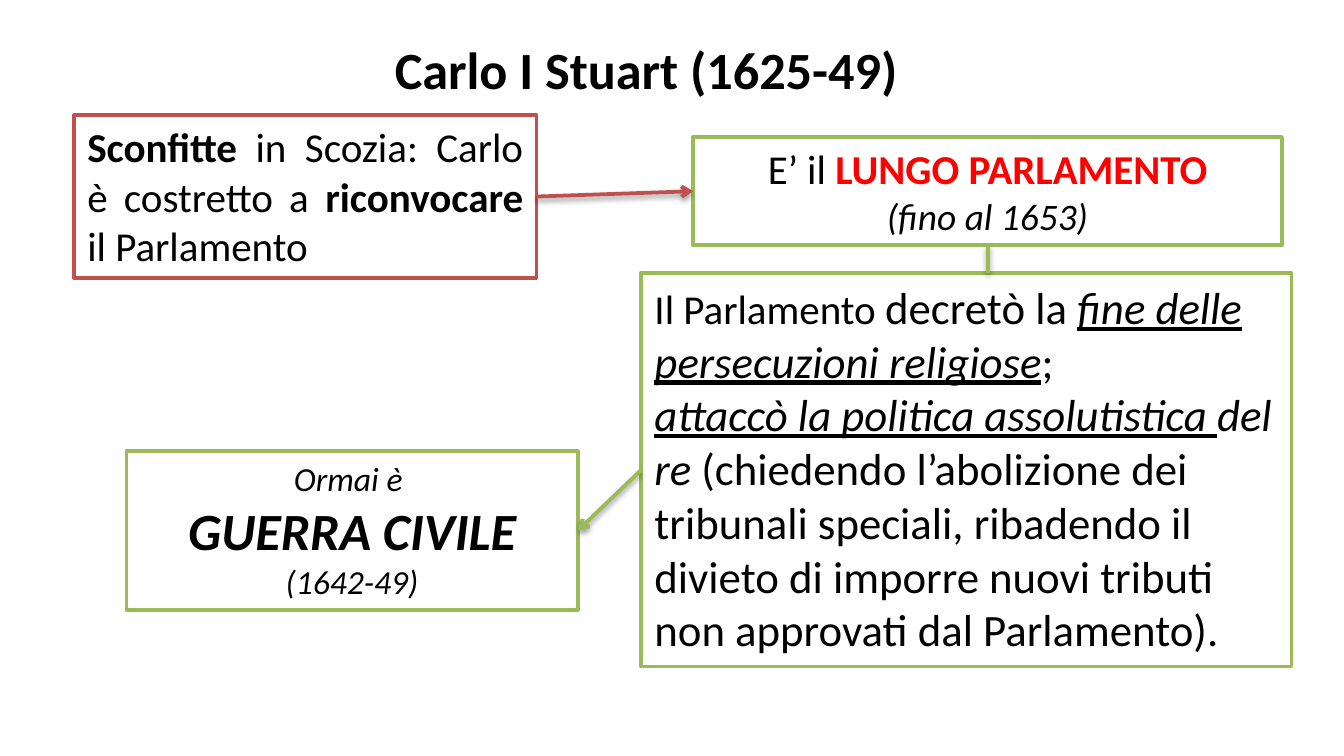
from dataclasses import dataclass
from typing import Optional

from lxml import etree
from pptx import Presentation
from pptx.dml.color import RGBColor
from pptx.enum import shapes, text
from pptx.oxml import ns
from pptx.util import Cm, Pt

BLACK = RGBColor(0x00, 0x00, 0x00)
WHITE = RGBColor(0xFF, 0xFF, 0xFF)
RED = RGBColor(0xFF, 0x00, 0x00)
BRICK = RGBColor(0xC0, 0x50, 0x4D)
GREEN = RGBColor(0x9B, 0xBB, 0x59)

FONT = "Calibri"
LEFT, MID, FULL = text.PP_ALIGN.LEFT, text.PP_ALIGN.CENTER, text.PP_ALIGN.JUSTIFY
# Connection sites of a rectangle
TOP_SITE, LEFT_SITE, LOW_SITE, RIGHT_SITE = range(4)


@dataclass
class Box:
    x: float
    y: float
    w: float
    h: float
    edge: Optional[RGBColor] = None

    def place(self) -> tuple:
        return Cm(self.x), Cm(self.y), Cm(self.w), Cm(self.h)


def add_box(slide, box: Box):
    """Draw a framed rectangle, or a bare text box when there is no edge."""
    if box.edge is None:
        shape = slide.shapes.add_textbox(*box.place())
    else:
        shape = slide.shapes.add_shape(shapes.MSO_SHAPE.RECTANGLE, *box.place())
        shape.shadow.inherit = False
        shape.fill.solid()
        shape.fill.fore_color.rgb = WHITE
        shape.line.color.rgb = box.edge
        shape.line.width = Pt(2)
    frame = shape.text_frame
    frame.word_wrap = True
    frame.auto_size = text.MSO_AUTO_SIZE.SHAPE_TO_FIT_TEXT
    frame.vertical_anchor = text.MSO_ANCHOR.TOP
    frame.paragraphs[0].alignment = LEFT
    return shape


def write(para, words: str, *, size: float, color: RGBColor = BLACK,
          bold: bool = False, ital: bool = False, under: bool = False) -> None:
    run = para.add_run()
    run.text = words
    font = run.font
    font.name, font.size, font.color.rgb = FONT, Pt(size), color
    font.bold, font.italic, font.underline = bold, ital, under


def add_para(shape, align, first: bool = False):
    frame = shape.text_frame
    para = frame.paragraphs[0] if first else frame.add_paragraph()
    para.alignment = align
    return para


def add_link(slide, start, site: int, color: RGBColor, end=None,
             goal: int = 0, drop: float = 0, arrow: bool = True) -> None:
    """Join two shapes, or drop a straight line from the start site."""
    line = slide.shapes.add_connector(shapes.MSO_CONNECTOR.STRAIGHT, 0, 0, 0, 0)
    line.begin_connect(start, site)
    if end is not None:
        line.end_connect(end, goal)
    else:
        line.end_x, line.end_y = line.begin_x, line.begin_y + Cm(drop)
    line.line.color.rgb = color
    line.line.width = Pt(2)
    if arrow:
        etree.SubElement(line.line._get_or_add_ln(), ns.qn("a:tailEnd"), type="arrow")
    # Soft shadow below the line
    effect = etree.SubElement(line._element.spPr, ns.qn("a:effectLst"))
    shade = etree.SubElement(effect, ns.qn("a:outerShdw"), blurRad=str(Pt(3.1)),
                             dist=str(Pt(1.6)), dir="5400000", rotWithShape="0")
    tint = etree.SubElement(shade, ns.qn("a:srgbClr"), val=str(BLACK))
    etree.SubElement(tint, ns.qn("a:alpha"), val="38000")


def main() -> None:
    deck = Presentation()
    deck.slide_width, deck.slide_height = Cm(25.4), Cm(14.29)
    slide = deck.slides.add_slide(deck.slide_layouts[6])

    # Title
    title = add_box(slide, Box(5.16, 0.58, 14.1, 1.45))
    write(add_para(title, MID, True), "Carlo I Stuart (1625-49)", size=28, bold=True)

    # Defeat in Scotland
    defeat = add_box(slide, Box(1.4, 2.18, 8.74, 3.07, BRICK))
    para = add_para(defeat, FULL, True)
    write(para, "Sconfitte", size=22, bold=True)
    write(para, " in Scozia: Carlo è costretto a ", size=22)
    write(para, "riconvocare", size=22, bold=True)
    write(para, " il Parlamento", size=22)

    # Civil war
    war = add_box(slide, Box(2.39, 8.53, 8.53, 3, GREEN))
    write(add_para(war, MID, True), "Ormai è ", size=18, ital=True)
    para = add_para(war, MID)
    write(para, "GUERRA CIVILE ", size=28, bold=True, ital=True)
    write(para, "(1642-49)", size=18, ital=True)

    # Long Parliament
    house = add_box(slide, Box(13.1, 2.59, 11.13, 2.05, GREEN))
    para = add_para(house, MID, True)
    write(para, "E’ il ", size=22)
    write(para, "LUNGO PARLAMENTO", size=22, color=RED, bold=True)
    write(add_para(house, MID), "(fino al 1653)", size=20, ital=True)

    # Its decrees
    acts = add_box(slide, Box(12.12, 5.16, 12.29, 7.44, GREEN))
    para = add_para(acts, LEFT, True)
    write(para, "Il Parlamento ", size=22)
    write(para, "decretò la ", size=24)
    write(para, "fine delle persecuzioni religiose", size=24, ital=True, under=True)
    write(para, ";", size=24)
    para = add_para(acts, LEFT)
    write(para, "attaccò la politica assolutistica ", size=24, ital=True, under=True)
    write(para, "del re", size=24, ital=True)
    write(para, " (chiedendo l’abolizione dei tribunali speciali, ribadendo il "
          "divieto di imporre nuovi tributi non approvati dal Parlamento).", size=24)

    # Links between the steps
    add_link(slide, defeat, RIGHT_SITE, BRICK, house, LEFT_SITE)
    add_link(slide, acts, LEFT_SITE, GREEN, war, RIGHT_SITE)
    add_link(slide, house, LOW_SITE, GREEN, drop=0.52, arrow=False)

    deck.save("out.pptx")


if __name__ == "__main__":
    main()
